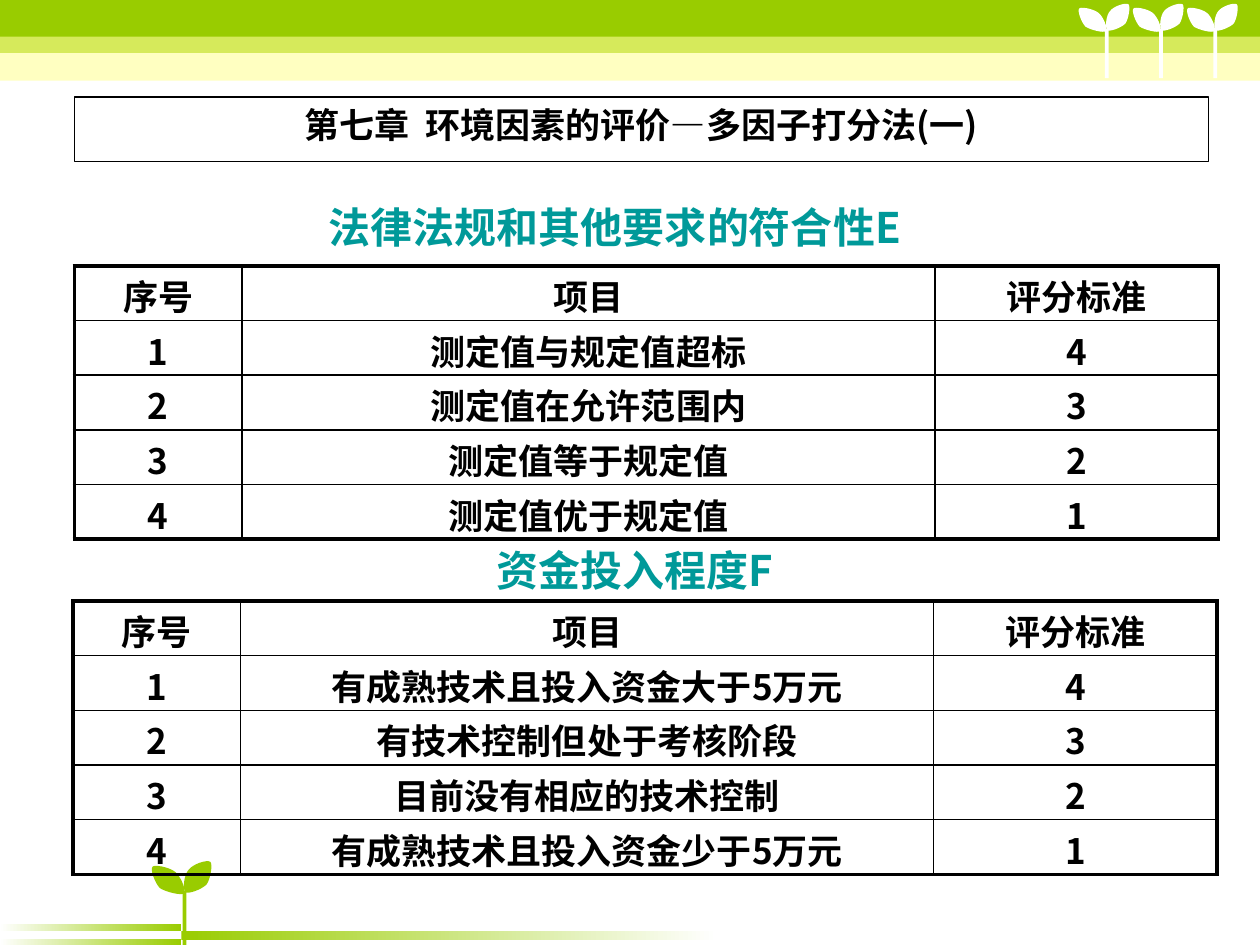
from lxml.etree import SubElement
from pptx import Presentation
from pptx.dml.color import RGBColor
from pptx.enum.shapes import MSO_SHAPE
from pptx.enum.text import MSO_ANCHOR, PP_ALIGN
from pptx.oxml.ns import qn
from pptx.util import Inches, Pt

GREEN = RGBColor(0x99, 0xCC, 0x00)
CREAM = RGBColor(0xFF, 0xFF, 0x99)
WHITE = RGBColor(0xFF, 0xFF, 0xFF)
BLACK = RGBColor(0x00, 0x00, 0x00)
TEAL = RGBColor(0x00, 0x99, 0x99)
FONT = "Noto Sans CJK SC"
COLUMN_WIDTHS = (1.33, 5.5, 2.25)
ROW_HEIGHT = 0.434
HEADER = ("序号", "项目", "评分标准")
COMPLIANCE = ("测定值与规定值超标", "测定值在允许范围内", "测定值等于规定值", "测定值优于规定值")
FUNDING = ("有成熟技术且投入资金大于5万元", "有技术控制但处于考核阶段",
           "目前没有相应的技术控制", "有成熟技术且投入资金少于5万元")
LEFT_LEAF = ((0.01, 0.02), (0.03, -0.01), (-0.02, -0.12), (-0.06, -0.15),
             (-0.11, -0.19), (-0.23, -0.21), (-0.24, -0.19),
             (-0.26, -0.17), (-0.22, -0.06), (-0.18, -0.02),
             (-0.13, 0.01), (-0.01, 0.04), (0.01, 0.02))
RIGHT_LEAF = ((0.02, 0.01), (0.04, 0.03), (0.15, -0.01), (0.19, -0.05),
              (0.22, -0.09), (0.24, -0.21), (0.22, -0.23),
              (0.19, -0.25), (0.08, -0.21), (0.05, -0.17),
              (0.01, -0.13), (0, -0.02), (0.02, 0.01))


def paint(shape, color):
    """Give a shape a plain fill without outline or shadow."""
    shape.shadow.inherit = False
    shape.fill.solid()
    shape.fill.fore_color.rgb = color
    shape.line.fill.background()


def add_curve(page, points, color):
    """Add a closed outline whose points are the controls of cubic curves."""
    builder = page.shapes.build_freeform(*points[0])
    builder.add_line_segments(points[1:], close=False)
    shape = builder.convert_to_shape()
    outline = next(shape._element.iter(qn("a:path")))
    lines = outline.findall(qn("a:lnTo"))
    for first in range(0, len(lines), 3):
        curve = SubElement(outline, qn("a:cubicBezTo"))
        for line in lines[first:first + 3]:
            curve.append(line[0])
            outline.remove(line)
    SubElement(outline, qn("a:close"))
    paint(shape, color)


def add_bar(page, left, top, width, height, color):
    """Add a plain rectangle."""
    bar = page.shapes.add_shape(MSO_SHAPE.RECTANGLE, Inches(left), Inches(top),
                                Inches(width), Inches(height))
    paint(bar, color)
    return bar


def add_fading_bar(page, left, top, width, height, start, end):
    """Add a rectangle that fades from left to right."""
    bar = add_bar(page, left, top, width, height, start)
    bar.fill.gradient()
    bar.fill.gradient_angle = 0
    for stop, color, position in zip(bar.fill.gradient_stops, (start, end), (0, 1)):
        stop.color.rgb = color
        stop.position = position


def add_sprout(page, left, top, scale, stem_height, color):
    """Add two leaves on a stem whose top left corner is given."""
    for leaf in (LEFT_LEAF, RIGHT_LEAF):
        add_curve(page, [(Inches(left + x * scale), Inches(top + y * scale))
                         for x, y in leaf], color)
    add_bar(page, left, top, 0.03, stem_height, color)


def add_decoration(page):
    """Draw the sprout at the foot and the bands with sprouts at the head."""
    add_sprout(page, 1.45, 7.07, 1, 0.43, GREEN)
    for top, height in ((7.45, 0.05), (7.33, 0.06)):
        add_fading_bar(page, 0, top, 1.44, height, WHITE, GREEN)
    add_fading_bar(page, 1.44, 7.39, 4.25, 0.07, GREEN, WHITE)
    add_bar(page, 0, 0, 10, 0.42, GREEN)
    band = add_bar(page, 0, 0.29, 10, 0.35, CREAM)
    color = band.fill._xPr.find(qn("a:solidFill"))[0]
    SubElement(color, qn("a:alpha"), val="60000")
    for index in range(3):
        add_sprout(page, 8.77 + 0.43 * index, 0.23, 0.85, 0.39, WHITE)


def move_to_master(page):
    """Move the decoration from the page to the slide master."""
    tree = page.slide_layout.slide_master.shapes._spTree
    decoration = [shape for shape in page.shapes if not shape.is_placeholder]
    for index, shape in enumerate(decoration, 2):
        tree.insert(index, shape._element)


def write(frame, text, size, color, latin_font=FONT):
    """Write one centred bold line."""
    para = frame.paragraphs[0]
    para.alignment = PP_ALIGN.CENTER
    span = para.add_run()
    span.text = text
    span.font.size = Pt(size)
    span.font.bold = True
    span.font.name = latin_font
    span.font.color.rgb = color
    SubElement(span.font._element, qn("a:ea"), typeface=FONT)


def set_title(page, text):
    """Format the title placeholder as a framed line."""
    title = page.shapes.title
    title.left, title.top, title.width, title.height = map(Inches, (0.59, 0.77, 9, 0.51))
    title.fill.solid()
    title.fill.fore_color.rgb = WHITE
    title.line.color.rgb = BLACK
    title.line.width = Pt(0.75)
    title.text_frame.vertical_anchor = MSO_ANCHOR.TOP
    write(title.text_frame, text, 20, BLACK)


def add_heading(page, left, top, width, height, text):
    """Add the heading above a table."""
    box = page.shapes.add_textbox(Inches(left), Inches(top), Inches(width), Inches(height))
    box.text_frame.word_wrap = True
    write(box.text_frame, text, 24, TEAL)


def set_borders(cell, outer_sides):
    """Draw thick lines on the outer sides of a cell and thin ones elsewhere."""
    properties = cell._tc.get_or_add_tcPr()
    for index, (side, outer) in enumerate(zip("LRTB", outer_sides)):
        line = properties.makeelement(qn(f"a:ln{side}"), {"w": str(Pt(2.25 if outer else 1))})
        fill = SubElement(line, qn("a:solidFill"))
        SubElement(fill, qn("a:srgbClr"), val=str(BLACK))
        properties.insert(index, line)


def add_score_table(page, left, top, items, header_font):
    """Add a table that scores the items from the highest mark down to one."""
    count = len(items)
    rows = [HEADER] + [(str(number), item, str(count + 1 - number))
                       for number, item in enumerate(items, 1)]
    table = page.shapes.add_table(len(rows), len(HEADER), Inches(left), Inches(top),
                                  Inches(sum(COLUMN_WIDTHS)),
                                  Inches(ROW_HEIGHT * len(rows))).table
    table.first_row = table.horz_banding = False
    for column, width in zip(table.columns, COLUMN_WIDTHS):
        column.width = Inches(width)
    for row_index, row in enumerate(rows):
        table.rows[row_index].height = Inches(ROW_HEIGHT)
        for column_index, text in enumerate(row):
            cell = table.cell(row_index, column_index)
            cell.fill.background()
            cell.vertical_anchor = MSO_ANCHOR.BOTTOM
            cell.margin_top, cell.margin_bottom = Inches(0.03), 0
            write(cell.text_frame, text, 20, BLACK, FONT if row_index else header_font)
            set_borders(cell, (column_index == 0, column_index == len(row) - 1,
                               row_index == 0, row_index == len(rows) - 1))


def main():
    """Build the slide and save it."""
    deck = Presentation()
    deck.slide_width, deck.slide_height = Inches(10), Inches(7.5)
    page = deck.slides.add_slide(deck.slide_layouts[5])
    add_decoration(page)
    move_to_master(page)
    set_title(page, "第七章  环境因素的评价—多因子打分法(一)")
    add_heading(page, 0.92, 1.55, 7.92, 0.91, "法律法规和其他要求的符合性E")
    add_score_table(page, 0.59, 2.11, COMPLIANCE, "Arial")
    add_score_table(page, 0.58, 4.77, FUNDING, FONT)
    add_heading(page, 1.25, 4.27, 7.58, 0.97, "资金投入程度F")
    deck.save("out.pptx")


if __name__ == "__main__":
    main()
